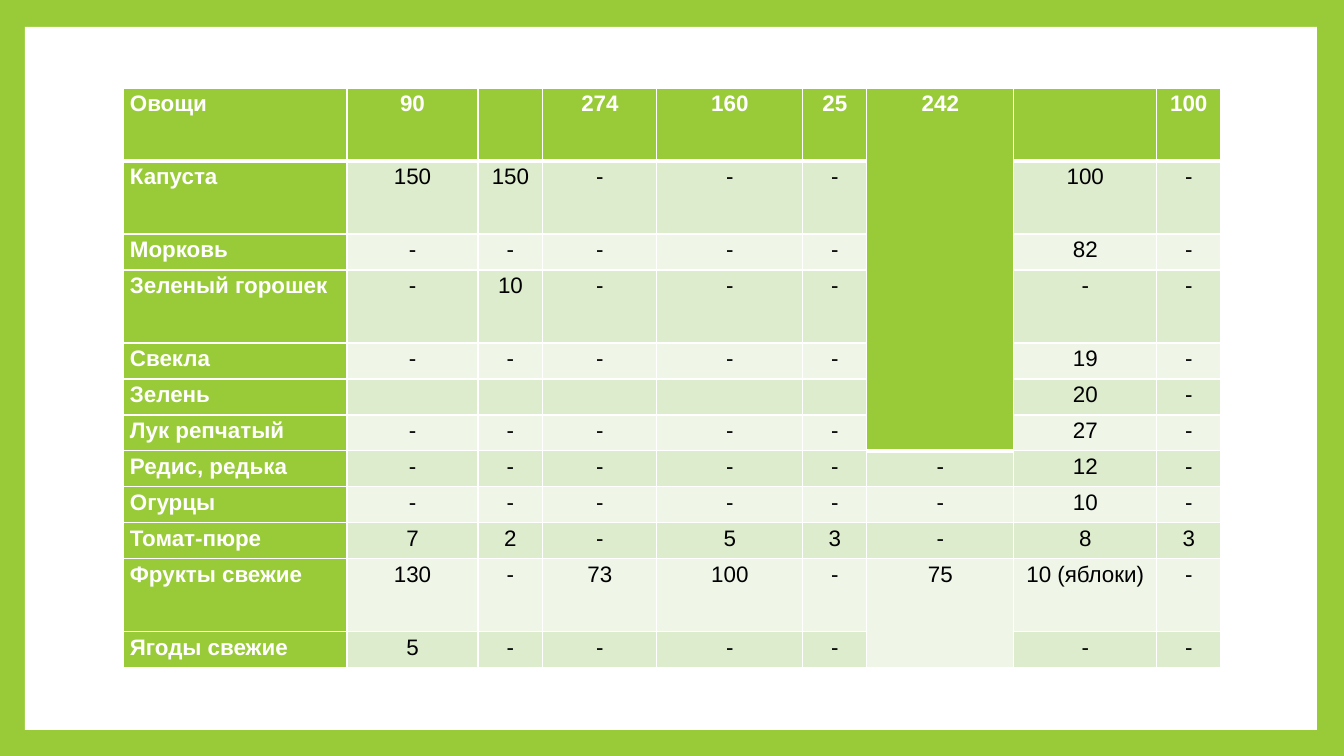
from dataclasses import dataclass

from lxml.etree import SubElement
from pptx import Presentation
from pptx.dml.color import RGBColor
from pptx.enum.shapes import MSO_SHAPE
from pptx.enum.text import PP_ALIGN
from pptx.oxml.ns import qn
from pptx.util import Pt

PX = 914400 / 100.8
COLUMNS = [224, 131, 65, 114, 146, 64, 147, 143, 64]
TALL_ROWS = {0, 1, 3, 10}
MERGES = [(0, 6, 6), (10, 11, 6)]
RATIONS = [row.split("|") for row in (
    "Овощи|90||274|160|25|242||100",
    "Капуста|150|150|-|-|-||100|-",
    "Морковь|-|-|-|-|-||82|-",
    "Зеленый горошек|-|10|-|-|-||-|-",
    "Свекла|-|-|-|-|-||19|-",
    "Зелень|||||||20|-",
    "Лук репчатый|-|-|-|-|-||27|-",
    "Редис, редька|-|-|-|-|-|-|12|-",
    "Огурцы|-|-|-|-|-|-|10|-",
    "Томат-пюре|7|2|-|5|3|-|8|3",
    "Фрукты свежие|130|-|73|100|-|75|10 (яблоки)|-",
    "Ягоды свежие|5|-|-|-|-||-|-",
)]


def px(n):
    """Turn px into EMU."""
    return round(n * PX)


@dataclass(frozen=True)
class Theme:
    """Colours and type of the slide."""
    accent: str = "99CB38"
    paper: str = "FFFFFF"
    ink: str = "000000"
    bands: tuple = ("EFF6E8", "DEECCE")
    font: str = "Arial"
    size: int = 16


class SlideBuilder:
    """Draws elements on one slide in one theme."""

    def __init__(self, slide, theme):
        """Keep the slide and its theme."""
        self.s, self.theme = slide, theme

    def paint(self, fill, color):
        """Make a fill solid."""
        fill.solid()
        fill.fore_color.rgb = RGBColor.from_string(color)

    def panel(self, x, y, w, h):
        """Add a plain paper-coloured rectangle."""
        sp = self.s.shapes.add_shape(MSO_SHAPE.RECTANGLE, px(x), px(y), px(w), px(h))
        sp.shadow.inherit = False
        self.paint(sp.fill, self.theme.paper)
        sp.line.fill.background()

    def border(self, cell, side, width):
        """Add one border to a cell."""
        tc_pr = cell._tc.get_or_add_tcPr()
        ln = SubElement(tc_pr, qn(f"a:ln{side}"), w=str(Pt(width)))
        fill = SubElement(ln, qn("a:solidFill"))
        SubElement(fill, qn("a:srgbClr"), val=self.theme.paper)

    def cell(self, cell, text, row, col):
        """Format and fill one table cell."""
        heading = row == 0 or col == 0
        cell.margin_left = cell.margin_right = px(7)
        cell.margin_top = cell.margin_bottom = 0
        if not cell.is_spanned:
            for side in "LRTB" if row == 0 else "LRB":
                self.border(cell, side, 3 if row == 0 and side == "B" else 1)
        self.paint(cell.fill, self.theme.accent if heading else self.theme.bands[row % 2])
        if not text:
            return
        cell.text_frame.text = text
        p = cell.text_frame.paragraphs[0]
        p.alignment = PP_ALIGN.CENTER if col else PP_ALIGN.LEFT
        p.line_spacing = 1.15
        p.space_after = Pt(10)
        r = p.runs[0]
        r.font.name, r.font.size, r.font.bold = self.theme.font, Pt(self.theme.size), heading
        r.font.color.rgb = RGBColor.from_string(self.theme.paper if heading else self.theme.ink)

    def table(self, x, y, widths, heights, data, merges):
        """Add a table with vertical merges."""
        table = self.s.shapes.add_table(
            len(heights), len(widths), px(x), px(y), px(sum(widths)), px(sum(heights))).table
        table.first_col = True
        for column, width in zip(table.columns, widths):
            column.width = px(width)
        for row, height in zip(table.rows, heights):
            row.height = px(height)
        for first, last, col in merges:
            table.cell(first, col).merge(table.cell(last, col))
        for i, texts in enumerate(data):
            for j, text in enumerate(texts):
                self.cell(table.cell(i, j), text, i, j)


def main():
    """Build and save the slide."""
    prs = Presentation()
    prs.slide_width, prs.slide_height = px(1344), px(756)
    s = prs.slides.add_slide(prs.slide_layouts[6])
    builder = SlideBuilder(s, Theme())
    builder.paint(s.background.fill, builder.theme.accent)
    builder.panel(25, 27, 1292, 703)
    heights = [73 if i in TALL_ROWS else 36 for i in range(len(RATIONS))]
    builder.table(123, 88, COLUMNS, heights, RATIONS, MERGES)
    prs.save("out.pptx")


if __name__ == "__main__":
    main()
